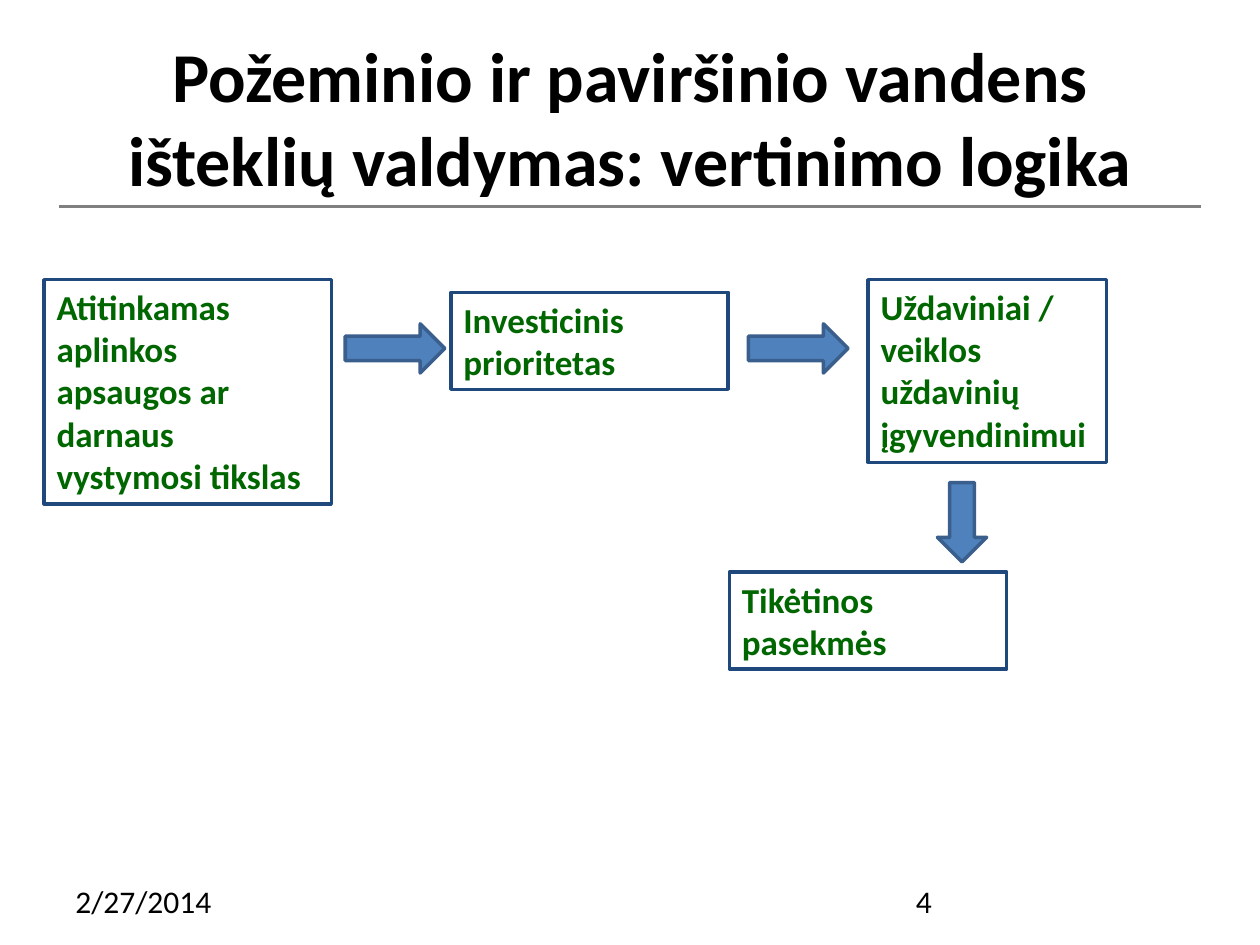
from lxml.etree import SubElement
from pptx import Presentation
from pptx.dml.color import RGBColor
from pptx.enum.shapes import MSO_CONNECTOR, MSO_SHAPE
from pptx.enum.text import MSO_ANCHOR, MSO_AUTO_SIZE, PP_ALIGN
from pptx.oxml.ns import qn
from pptx.util import Inches, Pt

COLS, ROWS = 100, 75
WIDE, HIGH = Inches(10), Inches(7.5)
BLACK, GREEN, NAVY = "000000", "006600", "1F497D"
BLUE, EDGE, GRAY = "4F81BD", "3A5F8C", "808080"


def color(code):
    return RGBColor.from_string(code)


def place(box, left, top, width, height):
    x, y = box[:2]
    return (round((x + left) * WIDE / COLS), round((y + top) * HIGH / ROWS),
            round(width * WIDE / COLS), round(height * HIGH / ROWS))


def write(shape, text, size=18, tint=BLACK, bold=False,
          align=PP_ALIGN.LEFT, anchor=MSO_ANCHOR.TOP, fit=MSO_AUTO_SIZE.NONE):
    frame = shape.text_frame
    frame.text = text
    frame.word_wrap = True
    frame.auto_size = fit
    frame.vertical_anchor = anchor
    para = frame.paragraphs[0]
    para.alignment = align
    font = para.runs[0].font
    font.name, font.size, font.bold = "Calibri", Pt(size), bold
    font.color.rgb = color(tint)


def draw(slide, kind, spot, line, fill=None):
    shape = slide.shapes.add_shape(kind, *spot)
    shape.shadow.inherit = False
    if fill:
        shape.fill.solid()
        shape.fill.fore_color.rgb = color(fill)
    else:
        shape.fill.background()
    shape.line.color.rgb = color(line)
    shape.line.width = Pt(2)
    return shape


def header(slide, box):
    left, top, width, height = place(box, 0, 13.4, box[2], 0)
    rule = slide.shapes.add_connector(
        MSO_CONNECTOR.STRAIGHT, left, top, left + width, top)
    rule.line.color.rgb = color(GRAY)
    rule.line.width = Pt(1.5)
    SubElement(rule._element.spPr, qn("a:effectLst"))
    title = slide.shapes.title
    title.left, title.top, title.width, title.height = place(
        box, 0.3, 0, box[2] - 0.6, 12.5)
    write(title, "Požeminio ir paviršinio vandens išteklių valdymas: "
          "vertinimo logika", size=40, bold=True,
          align=PP_ALIGN.CENTER, anchor=MSO_ANCHOR.MIDDLE)


def flow(slide, box):
    steps = [
        ("Atitinkamas aplinkos apsaugos ar darnaus vystymosi tikslas",
         0, 0, 22.8, 17.8),
        ("Investicinis prioritetas", 32.3, 1, 22, 7.7),
        ("Uždaviniai / veiklos uždavinių įgyvendinimui", 65.4, 0, 18.9, 14.5),
        ("Tikėtinos pasekmės", 54.4, 23.2, 22, 7.7),
    ]
    for text, *spot in steps:
        shape = draw(slide, MSO_SHAPE.RECTANGLE, place(box, *spot), NAVY)
        write(shape, text, size=20, tint=GREEN, bold=True,
              fit=MSO_AUTO_SIZE.SHAPE_TO_FIT_TEXT)
    arrows = [
        (MSO_SHAPE.RIGHT_ARROW, 23.9, 3.5, 7.9, 3.9),
        (MSO_SHAPE.RIGHT_ARROW, 55.9, 3.5, 7.9, 3.9),
        (MSO_SHAPE.DOWN_ARROW, 70.9, 16.1, 3.9, 6.3),
    ]
    for kind, *spot in arrows:
        draw(slide, kind, place(box, *spot), EDGE, BLUE)


def footer(slide, box):
    width, height = 23.3, box[3]
    for text, left in (("2/27/2014", 0), ("4", box[2] - width)):
        shape = slide.shapes.add_textbox(*place(box, left, 0, width, height))
        write(shape, text)


def main():
    deck = Presentation()
    deck.slide_width, deck.slide_height = WIDE, HIGH
    slide = deck.slides.add_slide(deck.slide_layouts[5])
    header(slide, (4.7, 3, 90.6, 13.4))
    flow(slide, (3.5, 22.2, 84.3, 30.9))
    footer(slide, (5, 69.5, 90, 4))
    deck.save("out.pptx")


if __name__ == "__main__":
    main()
